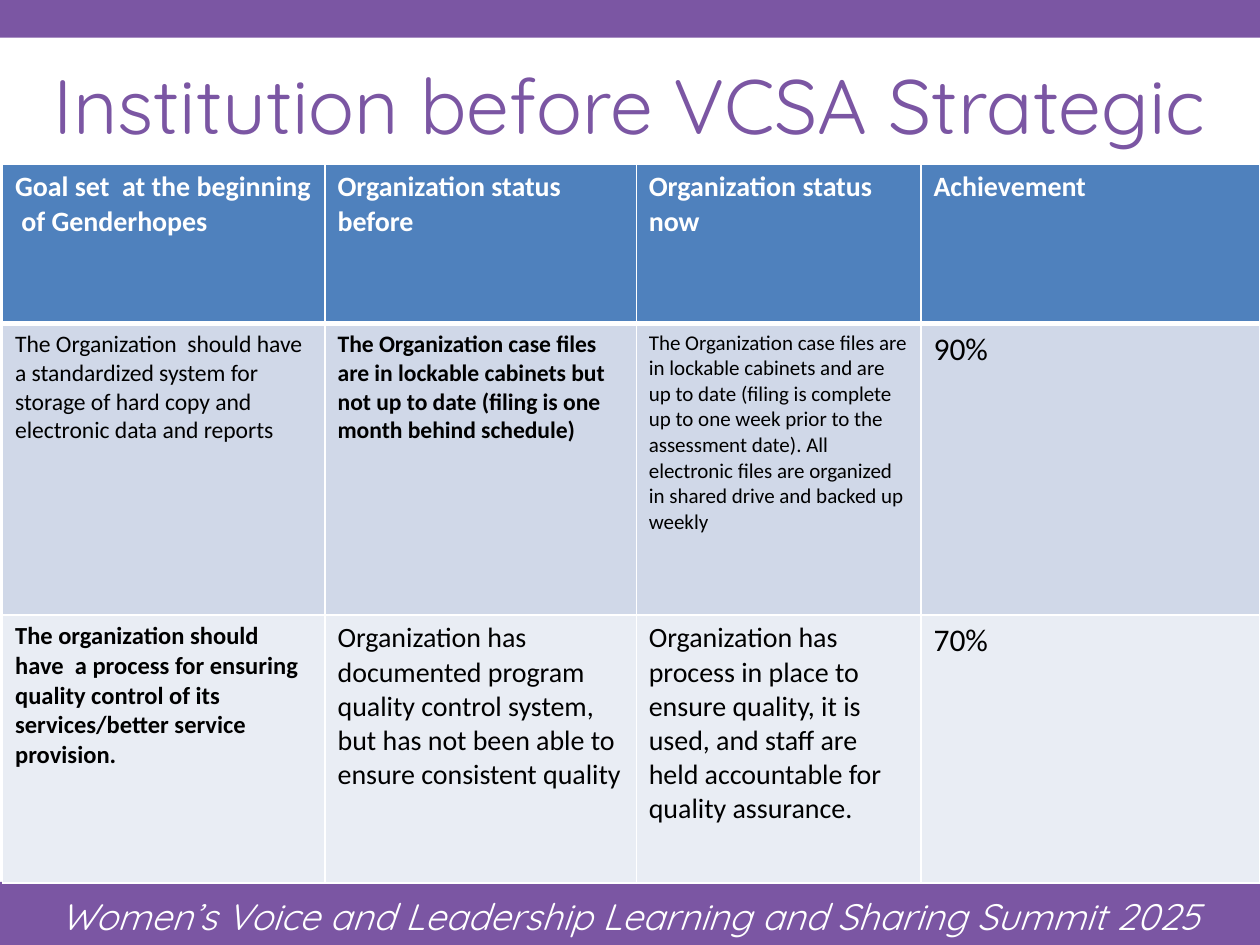
from lxml.etree import SubElement
from pptx import Presentation
from pptx.dml.color import RGBColor
from pptx.enum.shapes import MSO_SHAPE as Shape
from pptx.enum.text import MSO_ANCHOR as Anchor, PP_ALIGN as Align
from pptx.oxml.ns import qn
from pptx.util import Pt

PURPLE = RGBColor(0x7B, 0x56, 0xA3)
WHITE = RGBColor(0xFF, 0xFF, 0xFF)
BLACK = RGBColor(0x00, 0x00, 0x00)
HEADER_BLUE = RGBColor(0x4F, 0x81, 0xBD)
BAND_DARK = RGBColor(0xD0, 0xD8, 0xE8)
BAND_LIGHT = RGBColor(0xE9, 0xED, 0xF4)


def write_text(frame, text, size, color, font="Calibri", bold=False,
               italic=False, align=Align.LEFT, spacing=None):
    frame.word_wrap = True
    para = frame.paragraphs[0]
    para.alignment = align
    if spacing:
        para.line_spacing = spacing
    span = para.add_run()
    span.text = text
    span.font.name = font
    span.font.size = Pt(size)
    span.font.bold = bold
    span.font.italic = italic
    span.font.color.rgb = color
    return span


def add_border(cell, side, width):
    line = SubElement(cell._tc.get_or_add_tcPr(), qn(f"a:ln{side}"), w=str(Pt(width)))
    SubElement(SubElement(line, qn("a:solidFill")), qn("a:srgbClr"), val=str(WHITE))


deck = Presentation()
deck.slide_width, deck.slide_height = Pt(720), Pt(540)
page = deck.slides.add_slide(deck.slide_layouts[6])

# Purple bands at the top and the bottom
for top, height in ((0, 21.6), (504, 36)):
    band = page.shapes.add_shape(Shape.RECTANGLE, 0, Pt(top), Pt(720), Pt(height))
    band.shadow.inherit = False
    band.fill.solid()
    band.fill.fore_color.rgb = PURPLE
    band.line.fill.background()

# Footer
footer = page.shapes.add_textbox(Pt(12.24), Pt(505.44), Pt(695.5), Pt(34.5))
write_text(footer.text_frame,
           "Women’s Voice and Leadership Learning and Sharing Summit 2025",
           size=21, color=WHITE, font="Quicksand", italic=True,
           align=Align.CENTER, spacing=1.07)

# Title
title = page.shapes.add_textbox(0, Pt(25.92), Pt(720), Pt(66.24))
title.text_frame.vertical_anchor = Anchor.MIDDLE
write_text(title.text_frame, "Institution before VCSA Strategic",
           size=44, color=PURPLE, font="Quicksand", align=Align.CENTER)

# Table: each cell holds its text, size and weight
ROWS = [
    (HEADER_BLUE, WHITE, 91.44, [
        ("Goal set  at the beginning  of Genderhopes", 16, True),
        ("Organization status before", 16, True),
        ("Organization status now", 16, True),
        ("Achievement", 16, True),
    ]),
    (BAND_DARK, BLACK, 166.32, [
        ("The Organization  should have a standardized system for storage "
         "of hard copy and electronic data and reports", 13.5, False),
        ("The Organization case files are in lockable cabinets but not up to "
         "date (filing is one month behind schedule)", 13.5, True),
        ("The Organization case files are in lockable cabinets and are up to "
         "date (filing is complete up to one week prior to the assessment "
         "date). All electronic files are organized in shared drive and "
         "backed up weekly", 12, False),
        ("90%", 18, False),
    ]),
    (BAND_LIGHT, BLACK, 153.36, [
        ("The organization should have  a process for ensuring quality "
         "control of its services/better service provision.", 14, True),
        ("Organization has documented program quality control system, but "
         "has not been able to ensure consistent quality", 16, False),
        ("Organization has process in place to ensure quality, it is used, "
         "and staff are held accountable for quality assurance.", 16, False),
        ("70%", 18, False),
    ]),
]
COLUMN_WIDTHS = (184.32, 177.84, 162.72, 193.68)

table = page.shapes.add_table(len(ROWS), len(COLUMN_WIDTHS), Pt(1.44), Pt(93.6),
                              Pt(718.56), Pt(411.12)).table
for column, width in zip(table.columns, COLUMN_WIDTHS):
    column.width = Pt(width)

for row_index, (fill, color, height, entries) in enumerate(ROWS):
    table.rows[row_index].height = Pt(height)
    for column_index, (text, size, bold) in enumerate(entries):
        cell = table.cell(row_index, column_index)
        write_text(cell.text_frame, text, size=size, color=color, bold=bold)
        for side in "LRTB":
            header_edge = (row_index, side) in ((0, "B"), (1, "T"))
            add_border(cell, side, 3 if header_edge else 1)
        cell.fill.solid()
        cell.fill.fore_color.rgb = fill

deck.save("out.pptx")
